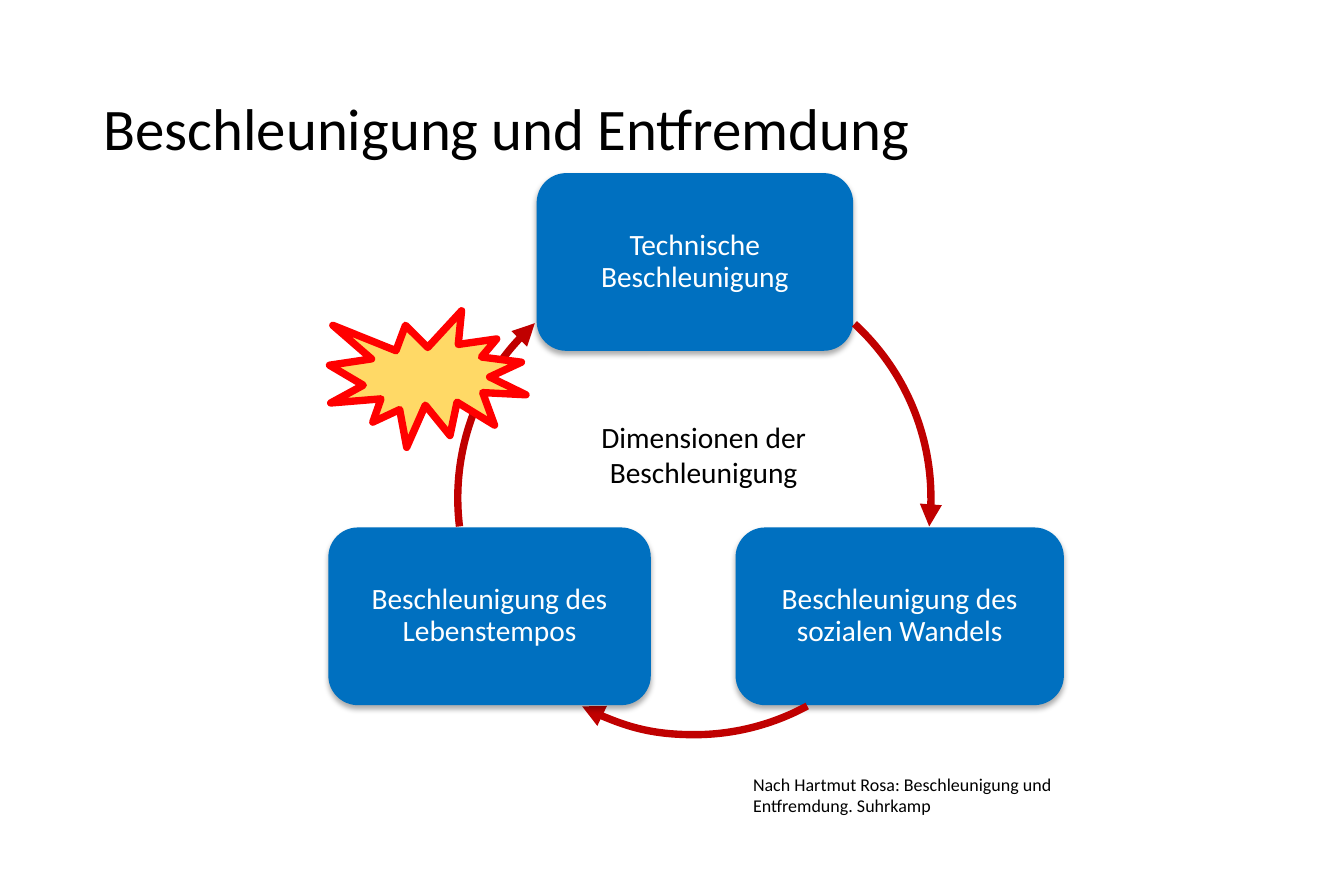
from dataclasses import dataclass

from lxml import etree
from pptx import Presentation
from pptx.dml.color import RGBColor
from pptx.enum.shapes import MSO_SHAPE
from pptx.enum.text import MSO_ANCHOR, PP_ALIGN
from pptx.oxml.ns import qn
from pptx.util import Emu, Pt

ROUNDED = MSO_SHAPE.ROUNDED_RECTANGLE
ARC = MSO_SHAPE.ARC
BURST = MSO_SHAPE.EXPLOSION1
LEFT, CENTER = PP_ALIGN.LEFT, PP_ALIGN.CENTER
TOP, MIDDLE = MSO_ANCHOR.TOP, MSO_ANCHOR.MIDDLE
PX = 9144


@dataclass(frozen=True)
class Theme:
    font: str = "Calibri"
    text: str = "000000"
    box: str = "0070C0"
    box_text: str = "FFFFFF"
    arrow: str = "C00000"
    burst: str = "FFD966"
    burst_line: str = "FF0000"
    shadow: str = "000000"
    title_size: int = 36
    body_size: int = 18
    source_size: int = 11
    line_width: float = 4.5


def px(n):
    return Emu(n * PX)


class Deck:
    def __init__(self, theme, width, height):
        self.theme = theme
        self.prs = Presentation()
        self.prs.slide_width, self.prs.slide_height = px(width), px(height)
        self.slide = self.prs.slides.add_slide(self.prs.slide_layouts[5])

    def fill_text(self, sp, text, size, color, align=LEFT, anchor=TOP, spacing=1.0):
        tf = sp.text_frame
        tf.word_wrap = True
        tf.vertical_anchor = anchor
        p = tf.paragraphs[0]
        p.alignment = align
        p.line_spacing = spacing
        r = p.add_run()
        r.text = text
        r.font.name = self.theme.font
        r.font.size = Pt(size)
        r.font.color.rgb = RGBColor.from_string(color)

    def title(self, text, x, y, w, h):
        sp = self.slide.shapes.title
        sp.left, sp.top, sp.width, sp.height = map(px, (x, y, w, h))
        self.fill_text(sp, text, self.theme.title_size, self.theme.text,
                       anchor=MIDDLE, spacing=0.9)

    def text(self, text, x, y, w, h, size, align=LEFT):
        sp = self.slide.shapes.add_textbox(*map(px, (x, y, w, h)))
        self.fill_text(sp, text, size, self.theme.text, align)

    def shape(self, kind, x, y, w, h, fill=None, line=None):
        sp = self.slide.shapes.add_shape(kind, *map(px, (x, y, w, h)))
        sp.shadow.inherit = False
        if fill:
            sp.fill.solid()
            sp.fill.fore_color.rgb = RGBColor.from_string(fill)
        else:
            sp.fill.background()
        if line:
            sp.line.color.rgb = RGBColor.from_string(line)
            sp.line.width = Pt(self.theme.line_width)
        else:
            sp.line.fill.background()
        return sp

    def box(self, text, x, y, w, h):
        sp = self.shape(ROUNDED, x, y, w, h, fill=self.theme.box)
        self.drop_shadow(sp)
        tf = sp.text_frame
        tf.margin_left = tf.margin_right = tf.margin_top = tf.margin_bottom = px(7)
        self.fill_text(sp, text, self.theme.body_size, self.theme.box_text,
                       CENTER, MIDDLE, 0.9)

    def drop_shadow(self, sp):
        effects = sp.element.spPr.find(qn("a:effectLst"))
        shadow = etree.SubElement(effects, qn("a:outerShdw"), blurRad=str(Pt(3.5)),
                                  dist=str(Pt(2.2)), dir="5400000", rotWithShape="0")
        color = etree.SubElement(shadow, qn("a:srgbClr"), val=self.theme.shadow)
        etree.SubElement(color, qn("a:alpha"), val="32000")

    def arc_arrow(self, x, y, size, start, end):
        sp = self.shape(ARC, x, y, size, size, line=self.theme.arrow)
        for i, degrees in enumerate((start, end)):
            sp.adjustments[i] = degrees * 0.6
        ln = sp.element.spPr.find(qn("a:ln"))
        etree.SubElement(ln, qn("a:tailEnd"), type="triangle")

    def burst(self, x, y, w, h):
        self.shape(BURST, x, y, w, h, self.theme.burst, self.theme.burst_line)


def main():
    theme = Theme()
    deck = Deck(theme, 1142, 750)
    deck.title("Beschleunigung und Entfremdung", 78, 71, 985, 82)

    cycle = (
        ("Technische Beschleunigung", 456, 147, 269, 312.6, 6.9),
        ("Beschleunigung des sozialen Wandels", 625, 448, 279, 61.5, 118.3),
        ("Beschleunigung des Lebenstempos", 279, 448, 274, 173.1, 227.6),
    )
    for label, x, y, w, start, end in cycle:
        deck.box(label, x, y, w, 151)
        deck.arc_arrow(389, 222, 402, start, end)

    deck.text("Nach Hartmut Rosa: Beschleunigung und Entfremdung. Suhrkamp",
              630, 652, 345, 47, theme.source_size)
    deck.text("Dimensionen der Beschleunigung", 476, 351, 244, 71,
              theme.body_size, CENTER)
    deck.burst(280, 264, 167, 116)
    deck.prs.save("out.pptx")


if __name__ == "__main__":
    main()
